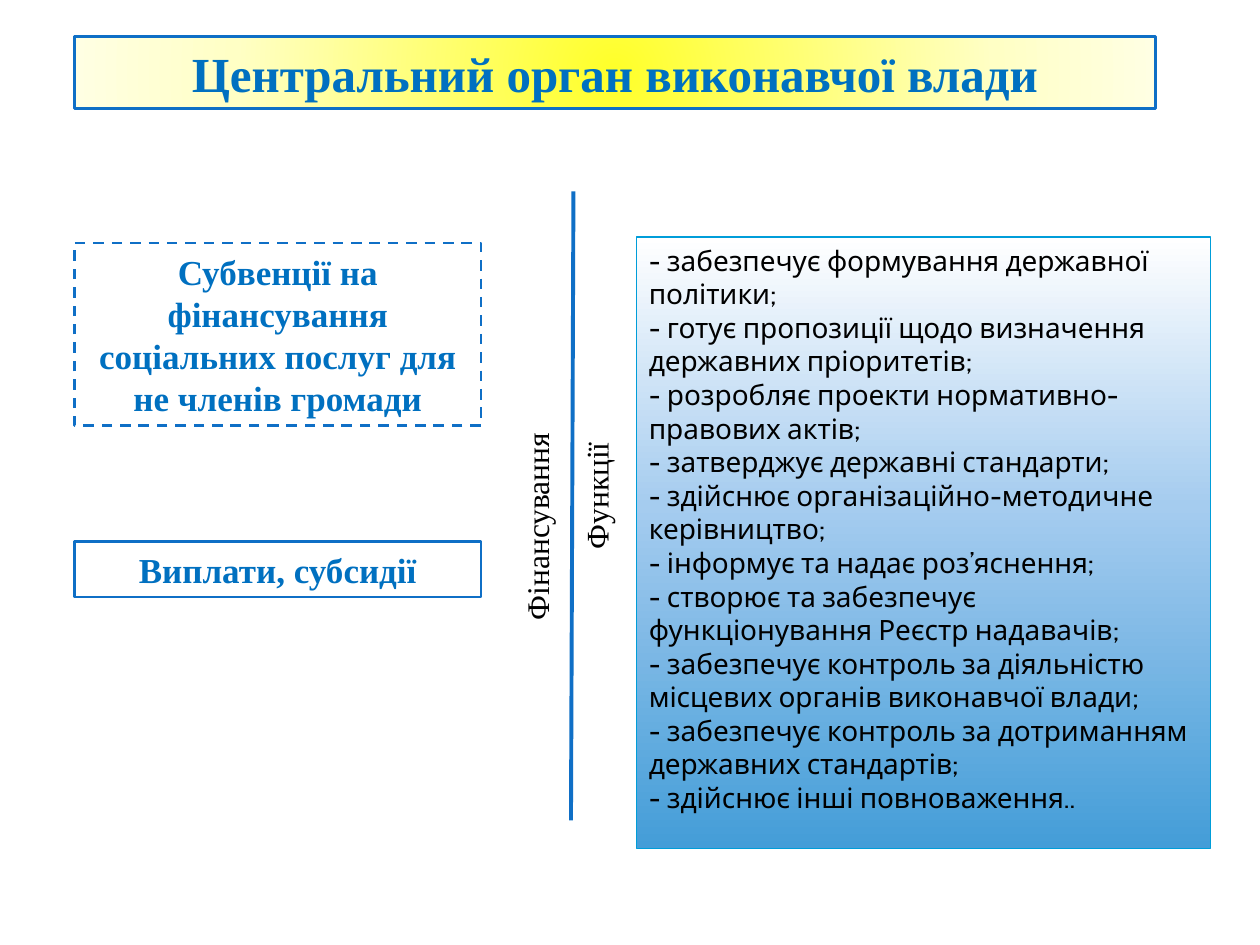
from lxml.etree import SubElement
from pptx import Presentation
from pptx.dml.color import RGBColor
from pptx.enum.dml import MSO_LINE as Dash
from pptx.enum.shapes import MSO_CONNECTOR as Link, MSO_SHAPE as Shape
from pptx.enum.text import MSO_ANCHOR as Anchor, PP_ALIGN as Align
from pptx.oxml.ns import qn
from pptx.util import Cm, Pt

BLUE = RGBColor(0x0F, 0x6F, 0xC6)
CYAN = RGBColor(0x00, 0x9D, 0xD9)
INK = RGBColor(0x00, 0x70, 0xC0)
BLACK = RGBColor(0x00, 0x00, 0x00)
GLOW = [(0, RGBColor(0xFF, 0xFF, 0x29)), (70, RGBColor(0xFF, 0xFF, 0xC5)),
        (100, RGBColor(0xFF, 0xFF, 0xE3))]
SKY = [(0, RGBColor(0xFF, 0xFF, 0xFF)), (44, RGBColor(0xA5, 0xCC, 0xEF)),
       (100, RGBColor(0x44, 0x9D, 0xD8))]
SERIF, SANS = "Times New Roman", "Cabin"

DUTIES = [
    "- забезпечує формування державної політики;",
    "- готує пропозиції щодо визначення державних пріоритетів;",
    "- розробляє проекти нормативно-правових актів;",
    "- затверджує державні стандарти;",
    "- здійснює організаційно-методичне керівництво;",
    "- інформує та надає роз’яснення;",
    "- створює та забезпечує функціонування Реєстр надавачів;",
    "- забезпечує контроль за діяльністю місцевих органів виконавчої влади;",
    "- забезпечує контроль за дотриманням державних стандартів;",
    "- здійснює інші повноваження..",
]


def shade(shape, stops, radial=False):
    """Fill with a gradient: outward from the centre, or top to bottom."""
    grad = SubElement(shape.fill._xPr, qn("a:gradFill"), rotWithShape="1")
    shape._element.spPr.find(qn("a:prstGeom")).addnext(grad)
    row = SubElement(grad, qn("a:gsLst"))
    for pos, color in stops:
        stop = SubElement(row, qn("a:gs"), pos=str(pos * 1000))
        SubElement(stop, qn("a:srgbClr"), val=str(color))
    if radial:
        way = SubElement(grad, qn("a:path"), {"path": "circle"})
        SubElement(way, qn("a:fillToRect"), dict.fromkeys("ltrb", "50000"))
    else:
        SubElement(grad, qn("a:lin"), ang="5400000", scaled="0")


def write(frame, lines, size, font, color, bold=False, align=Align.LEFT):
    for i, line in enumerate(lines):
        para = frame.add_paragraph() if i else frame.paragraphs[0]
        para.alignment = align
        run = para.add_run()
        run.text = line
        run.font.size, run.font.name = Pt(size), font
        run.font.bold = bold
        run.font.color.rgb = color


def panel(slide, box, color, width, stops=None, radial=False):
    shape = slide.shapes.add_shape(Shape.RECTANGLE, *map(Cm, box))
    shape.shadow.inherit = False
    if stops:
        shade(shape, stops, radial)
    else:
        shape.fill.background()
    shape.line.color.rgb, shape.line.width = color, Pt(width)
    shape.text_frame.word_wrap = True
    return shape


def title(slide, box):
    shape = panel(slide, box, BLUE, 1.5, GLOW, radial=True)
    write(shape.text_frame, ["Центральний орган виконавчої влади"],
          28, SERIF, INK, True, Align.CENTER)


def funds(slide, box):
    """Two framed sources of money, the upper one dashed."""
    left, top, wide, high = box
    grant = panel(slide, (left, top, wide, 3.68), BLUE, 1.5)
    grant.line.dash_style = Dash.DASH
    pay = panel(slide, (left, top + high - 1.12, wide, 1.12), BLUE, 1.5)
    for shape, text in (
            (grant, "Субвенції на фінансування соціальних послуг для не членів громади"),
            (pay, "Виплати, субсидії")):
        write(shape.text_frame, [text], 20, SERIF, INK, True, Align.CENTER)


def label(slide, text, mid_x, mid_y, wide, high=1.02):
    """Text that reads upward, centred on the given point."""
    area = slide.shapes.add_textbox(Cm(mid_x - wide / 2), Cm(mid_y - high / 2),
                                    Cm(wide), Cm(high))
    area.rotation = 270
    area.text_frame.word_wrap = False
    write(area.text_frame, [text], 18, SERIF, BLACK)


def divide(slide, box):
    """Near-vertical rule with a label on each side."""
    left, top, wide, high = box
    rule = slide.shapes.add_connector(Link.STRAIGHT, Cm(left + wide), Cm(top),
                                      Cm(left), Cm(top + high))
    rule.line.color.rgb, rule.line.width = BLUE, Pt(2.25)
    SubElement(rule._element.spPr, qn("a:effectLst"))
    label(slide, "Фінансування", left - 0.69, top + 6.73, 4.32)
    label(slide, "Функції", left + 0.51, top + 6.12, 2.69)


def duties(slide, box):
    frame = panel(slide, box, CYAN, 0.75, SKY).text_frame
    frame.vertical_anchor = Anchor.TOP
    write(frame, DUTIES, 16, SANS, BLACK)


def main():
    deck = Presentation()
    deck.slide_width, deck.slide_height = Cm(25.4), Cm(19.05)
    slide = deck.slides.add_slide(deck.slide_layouts[6])
    duties(slide, (12.83, 4.78, 11.58, 12.32))
    divide(slide, (11.51, 3.86, 0.05, 12.68))
    funds(slide, (1.5, 4.9, 8.2, 7.14))
    title(slide, (1.5, 0.74, 21.79, 1.45))
    deck.save("out.pptx")


if __name__ == "__main__":
    main()
